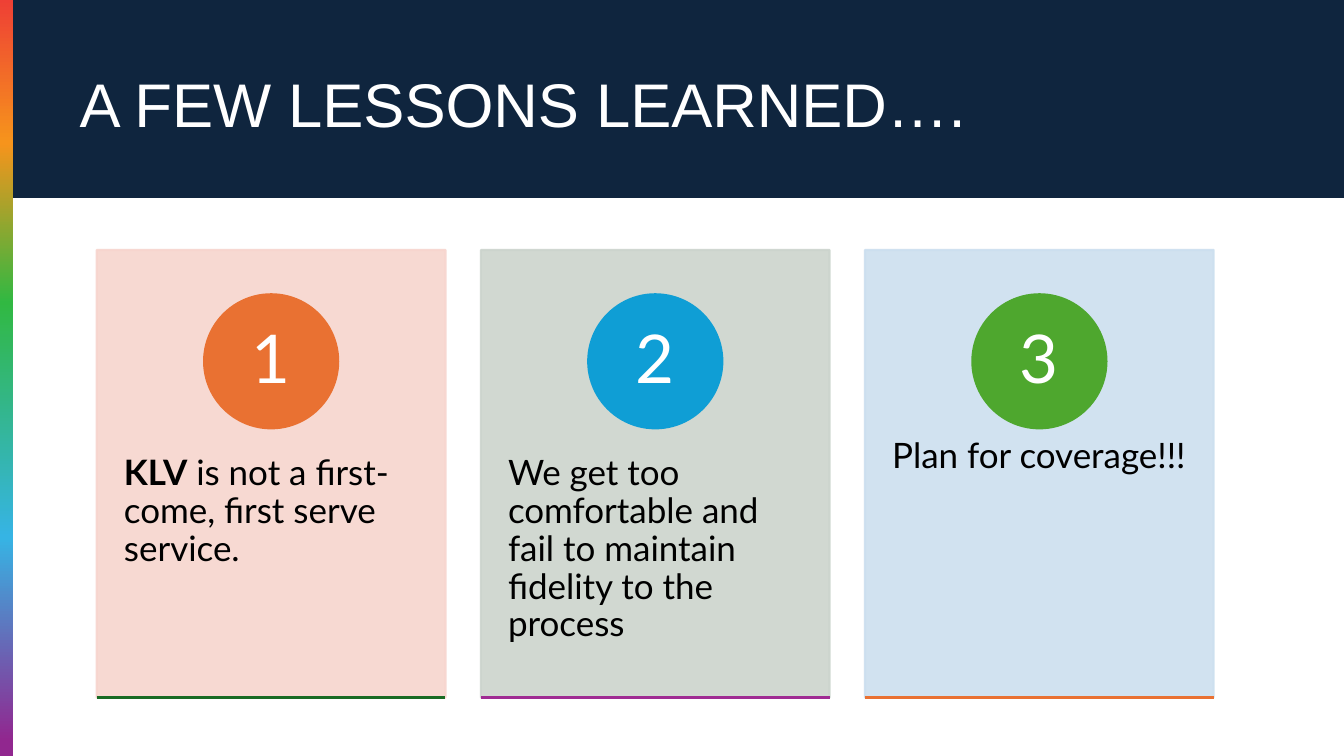
"""Build the three-card slide of lessons learned."""
from dataclasses import dataclass

from lxml import etree
from pptx import Presentation
from pptx.dml.color import RGBColor
from pptx.enum.shapes import MSO_CONNECTOR, MSO_SHAPE
from pptx.enum.text import MSO_ANCHOR, PP_ALIGN
from pptx.oxml.ns import qn
from pptx.util import Inches, Pt

RECTANGLE, OVAL = MSO_SHAPE.RECTANGLE, MSO_SHAPE.OVAL
STRAIGHT = MSO_CONNECTOR.STRAIGHT
TOP, MIDDLE, BOTTOM = MSO_ANCHOR.TOP, MSO_ANCHOR.MIDDLE, MSO_ANCHOR.BOTTOM
LEFT, CENTER = PP_ALIGN.LEFT, PP_ALIGN.CENTER
WIDTH, HEIGHT = Inches(13.33), Inches(7.5)


@dataclass(frozen=True)
class Theme:
    navy: str = "0F253E"
    white: str = "FFFFFF"
    black: str = "000000"
    rainbow: tuple = ((0, "EE4035"), (19, "F6941C"), (40, "31B842"),
                      (71, "36B4E4"), (98, "91278F"))
    title_font: str = "Arial"
    card_font: str = "Lato"
    title_size: int = 44
    number_size: int = 48
    lesson_size: int = 25
    outline: float = 1.5
    card_opacity: int = 90


@dataclass(frozen=True)
class Box:
    """Place and size in percent of the slide's width and height."""
    left: float
    top: float
    width: float
    height: float

    def emu(self) -> tuple:
        return (round(WIDTH * self.left / 100), round(HEIGHT * self.top / 100),
                round(WIDTH * self.width / 100), round(HEIGHT * self.height / 100))


@dataclass(frozen=True)
class Lesson:
    lead: str
    rest: str
    card: str
    badge: str
    rule: str


@dataclass(frozen=True)
class TextStyle:
    font: str
    size: int
    color: str
    align: PP_ALIGN
    anchor: MSO_ANCHOR
    insets: tuple


THEME = Theme()
TITLE = TextStyle(THEME.title_font, THEME.title_size, THEME.white, LEFT, BOTTOM,
                  (0.24, 0.05, 0.1, 0.05))
NUMBER = TextStyle(THEME.card_font, THEME.number_size, THEME.white, CENTER, MIDDLE,
                   (0.1, 0.01, 0.1, 0.01))
LESSON = TextStyle(THEME.card_font, THEME.lesson_size, THEME.black, LEFT, TOP,
                   (0.27, 0.36, 0.27, 0.36))
STRIPE_WIDTH = 0.98
FIRST_CARD, CARD_PITCH = 7.2, 28.58
CARD_TOP, CARD_WIDTH, CARD_HEIGHT = 33.07, 25.95, 59.2
BADGE_TOP, BADGE_WIDTH, BADGE_HEIGHT = 38.93, 9.98, 17.73
LESSON_TOP, LESSON_HEIGHT = 55.47, 35.6

LESSONS = (
    Lesson("KLV", " is not a first-come, first serve service.",
           "F7D5CE", "E97132", "196B24"),
    Lesson("", "We get too comfortable and fail to maintain fidelity to the process",
           "CCD4CD", "0F9ED5", "A02B93"),
    Lesson("", "Plan for coverage!!!", "CCDFEF", "4EA72E", "E97132"),
)


def rgb(color: str) -> RGBColor:
    return RGBColor.from_string(color)


def add_panel(slide, kind: MSO_SHAPE, box: Box, color: str, opacity: int = 100):
    panel = slide.shapes.add_shape(kind, *box.emu())
    panel.shadow.inherit = False
    panel.fill.solid()
    panel.fill.fore_color.rgb = rgb(color)
    panel.line.color.rgb = rgb(color)
    panel.line.width = Pt(THEME.outline)
    if opacity < 100:
        for paint in list(panel.element.spPr.iter(qn("a:srgbClr"))):
            etree.SubElement(paint, qn("a:alpha"), val=str(opacity * 1000))
    return panel


def add_stripe(slide) -> None:
    stripe = add_panel(slide, RECTANGLE, Box(0, 0, STRIPE_WIDTH, 100), THEME.white)
    stripe.line.fill.background()
    stripe.fill.gradient()
    stripe.fill.gradient_angle = 270
    stops = next(stripe.element.spPr.iter(qn("a:gsLst")))
    for stop in list(stops):
        stops.remove(stop)
    for position, color in THEME.rainbow:
        stop = etree.SubElement(stops, qn("a:gs"), pos=str(position * 1000))
        etree.SubElement(stop, qn("a:srgbClr"), val=color)


def write(holder, style: TextStyle, text: str, lead: str = "") -> None:
    frame = holder.text_frame
    frame.word_wrap = True
    frame.vertical_anchor = style.anchor
    (frame.margin_left, frame.margin_top,
     frame.margin_right, frame.margin_bottom) = map(Inches, style.insets)
    paragraph = frame.paragraphs[0]
    paragraph.text = lead or text
    if lead:
        paragraph.runs[0].font.bold = True
        paragraph.add_run().text = text
    paragraph.alignment = style.align
    paragraph.line_spacing = 0.9
    for run in paragraph.runs:
        run.font.name = style.font
        run.font.size = Pt(style.size)
        run.font.color.rgb = rgb(style.color)


def add_rule(slide, left: float, color: str) -> None:
    x, y, width, _ = Box(left, CARD_TOP + CARD_HEIGHT, CARD_WIDTH, 0).emu()
    rule = slide.shapes.add_connector(STRAIGHT, x, y, x + width, y)
    rule.line.color.rgb = rgb(color)
    rule.line.width = Pt(THEME.outline)
    etree.SubElement(rule.element.spPr, qn("a:effectLst"))


def add_card(slide, index: int, lesson: Lesson) -> None:
    left = FIRST_CARD + index * CARD_PITCH
    add_panel(slide, RECTANGLE, Box(left, CARD_TOP, CARD_WIDTH, CARD_HEIGHT),
              lesson.card, THEME.card_opacity)
    message = slide.shapes.add_textbox(
        *Box(left, LESSON_TOP, CARD_WIDTH, LESSON_HEIGHT).emu())
    write(message, LESSON, lesson.rest, lesson.lead)
    badge_left = left + (CARD_WIDTH - BADGE_WIDTH) / 2
    badge = add_panel(slide, OVAL, Box(badge_left, BADGE_TOP, BADGE_WIDTH, BADGE_HEIGHT),
                      lesson.badge)
    write(badge, NUMBER, str(index + 1))
    add_rule(slide, left, lesson.rule)


def main() -> None:
    deck = Presentation()
    deck.slide_width, deck.slide_height = WIDTH, HEIGHT
    slide = deck.slides.add_slide(deck.slide_layouts[6])
    slide.background.fill.solid()
    slide.background.fill.fore_color.rgb = rgb(THEME.navy)
    body = add_panel(slide, RECTANGLE, Box(STRIPE_WIDTH, 26.27, 100 - STRIPE_WIDTH, 73.73),
                     THEME.white)
    body.line.width = Pt(1)
    add_stripe(slide)
    title = slide.shapes.add_textbox(*Box(4.13, 4.53, 71.57, 14.8).emu())
    write(title, TITLE, "A FEW LESSONS LEARNED….")
    for index, lesson in enumerate(LESSONS):
        add_card(slide, index, lesson)
    deck.save("out.pptx")


if __name__ == "__main__":
    main()
